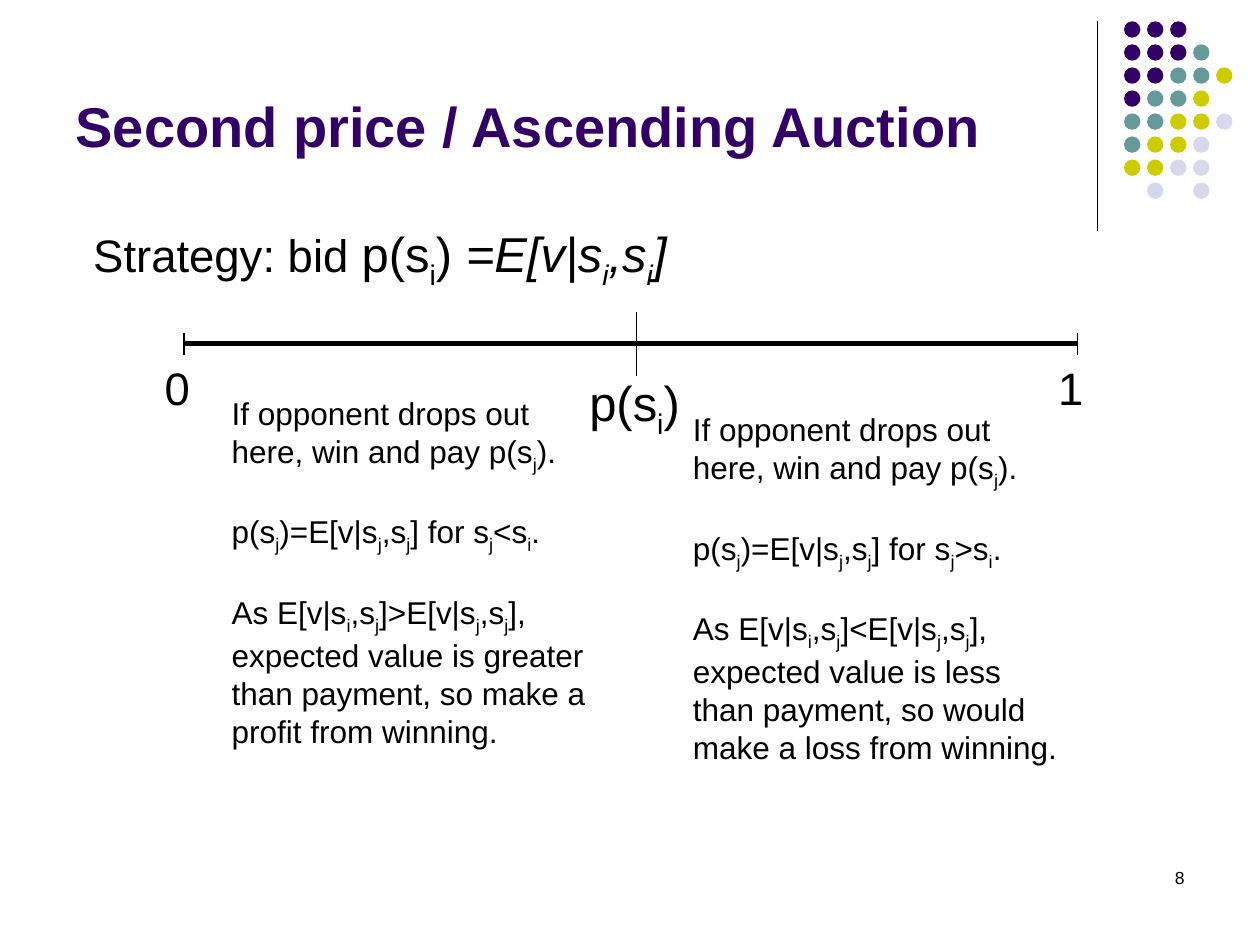
from lxml import etree
from pptx import Presentation
from pptx import util as u
from pptx.dml.color import RGBColor
from pptx.enum import shapes, text
from pptx.oxml.ns import qn

COLORS = {name: RGBColor.from_string(value) for name, value in {
    "purple": "330066", "teal": "669999", "olive": "CCCC00",
    "lilac": "D8D8EC", "black": "000000"}.items()}

deck = Presentation()
deck.slide_width, deck.slide_height = u.Cm(25.4), u.Cm(19.05)
page = deck.slides.add_slide(deck.slide_layouts[5])


def draw_line(x1, y1, x2, y2, width=0.75):
    line = page.shapes.add_connector(
        shapes.MSO_CONNECTOR.STRAIGHT, u.Cm(x1), u.Cm(y1), u.Cm(x2), u.Cm(y2))
    line.line.color.rgb = COLORS["black"]
    line.line.width = u.Pt(width)
    etree.SubElement(line._element.spPr, qn("a:effectLst"))


def add_words(para, words, size, italic=False):
    """Add text in which each letter after an underscore is a subscript."""
    para.font.name, para.font.color.rgb = "Arial", COLORS["black"]
    first, *rest = words.split("_")
    pieces = [(first, False)]
    for part in rest:
        pieces += [(part[0], True), (part[1:], False)]
    for piece, lowered in pieces:
        if piece:
            span = para.add_run()
            span.text = piece
            span.font.size = u.Pt(size)
            if italic:
                span.font.italic = True
            if lowered:
                span._r.get_or_add_rPr().set("baseline", "-25000")


# Corner ornament
draw_line(22.12, 0.43, 22.12, 4.65)
dot_rows = ["PPP", "PPPT", "PPTTO", "PTTO", "TTOOL", "TOOL", "OOLL", " L L"]
dot_colors = {"P": "purple", "T": "teal", "O": "olive", "L": "lilac"}
pitch = 3.25 / 7
for row, letters in enumerate(dot_rows):
    for column, letter in enumerate(letters):
        if letter == " ":
            continue
        dot = page.shapes.add_shape(
            shapes.MSO_SHAPE.OVAL, u.Cm(22.66 + column * pitch),
            u.Cm(0.43 + row * pitch), u.Cm(0.33), u.Cm(0.33))
        dot.shadow.inherit = False
        dot.fill.solid()
        dot.fill.fore_color.rgb = COLORS[dot_colors[letter]]
        dot.line.fill.background()

# Title
title = page.shapes.title
title.left, title.top, title.width, title.height = (
    u.Cm(1.27), u.Cm(0.33), u.Cm(20.96), u.Cm(3))
title.text_frame.text = "Second price / Ascending Auction"
title.text_frame.vertical_anchor = text.MSO_ANCHOR.BOTTOM
para = title.text_frame.paragraphs[0]
para.alignment = text.PP_ALIGN.LEFT
para.font.name, para.font.size, para.font.bold = "Arial", u.Pt(32), True
para.font.color.rgb = COLORS["purple"]

# Signal scale from 0 to 1
draw_line(3.71, 6.93, 21.72, 6.93, 3)
for x, reach in [(3.71, 0.22), (21.72, 0.22), (12.83, 0.64)]:
    draw_line(x, 6.93 - reach, x, 6.93 + reach)

# Single-line texts
labels = [
    (3.07, 7.14, 1.02, 1.35, "0", 26),
    (21.08, 7.14, 1.02, 1.35, "1", 26),
    (11.63, 7.39, 2.39, 1.45, "p(s_i)", 28),
    (1.63, 4.39, 12.24, 1.45, "Strategy: bid ", 26),
    (18.21, 17.35, 5.92, 1.27, "8", 10),
]
for left, top, width, height, words, size in labels:
    box = page.shapes.add_textbox(u.Cm(left), u.Cm(top), u.Cm(width), u.Cm(height))
    para = box.text_frame.paragraphs[0]
    add_words(para, words, size)
    if words.startswith("Strategy"):
        add_words(para, "p(s_i) ", 28)
        add_words(para, "=E[v|s_i,s_i]", 28, italic=True)
    elif words == "8":
        box.text_frame.word_wrap = True
        para.alignment = text.PP_ALIGN.RIGHT

# Explanations on either side of the bid
cases = [
    (4.42, 7.82, "<", ">", "greater than payment, so make a profit from winning."),
    (13.72, 8.15, ">", "<", "less than payment, so would make a loss from winning."),
]
for left, top, signal_sign, value_sign, outcome in cases:
    box = page.shapes.add_textbox(u.Cm(left), u.Cm(top), u.Cm(8), u.Cm(7.19))
    frame = box.text_frame
    frame.word_wrap = True
    statements = [
        "If opponent drops out here, win and pay p(s_j).",
        f"p(s_j)=E[v|s_j,s_j] for s_j{signal_sign}s_i.",
        f"As E[v|s_i,s_j]{value_sign}E[v|s_j,s_j], expected value is {outcome}",
    ]
    for number, statement in enumerate(statements):
        para = frame.add_paragraph() if number else frame.paragraphs[0]
        para.space_before = u.Pt(21.5 if number else 0)
        add_words(para, statement, 18)

deck.save("out.pptx")
